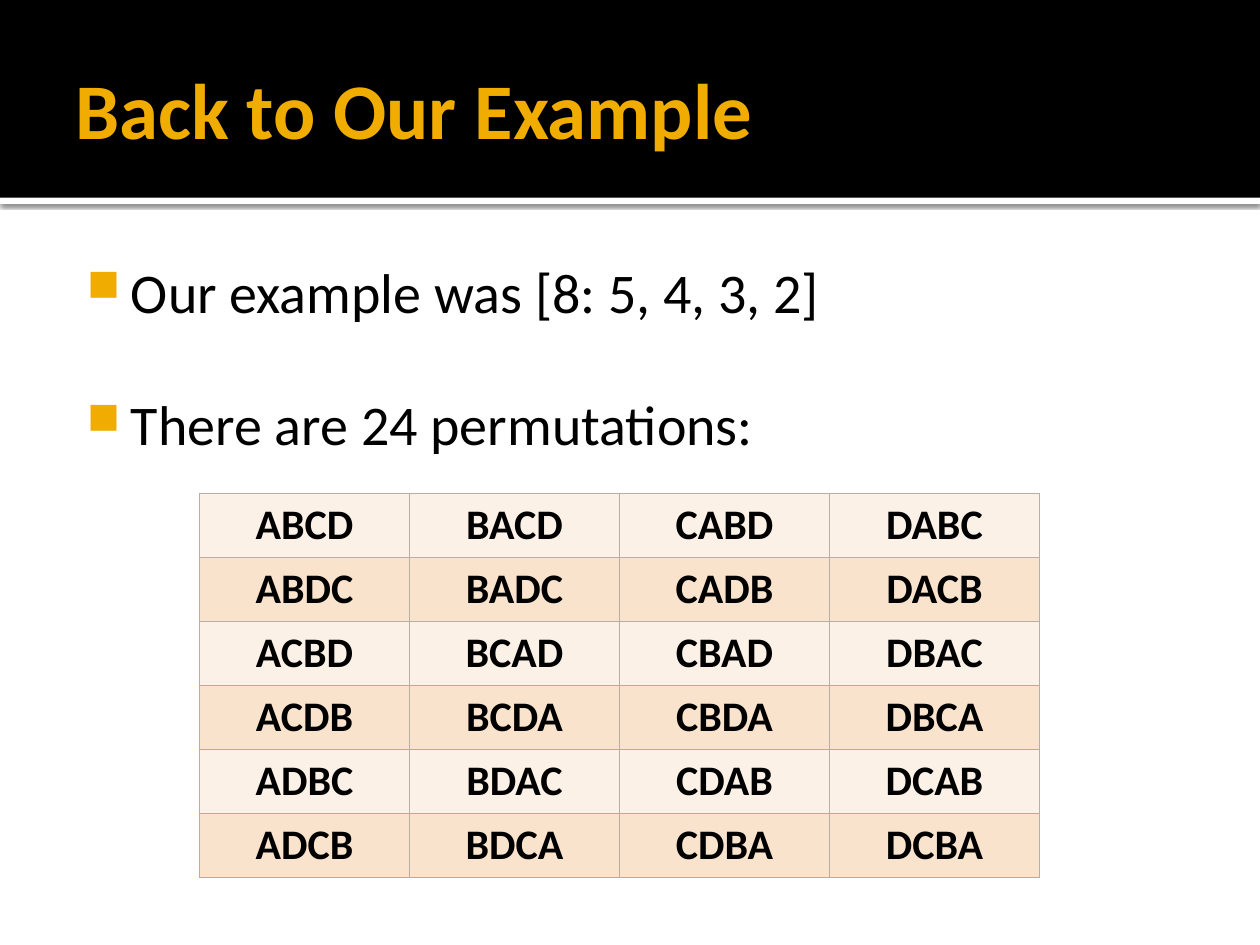
"""Build a slide that lists the 24 permutations of four voters in a table."""
from itertools import permutations

from lxml import etree
from pptx import Presentation
from pptx.dml.color import RGBColor
from pptx.enum.shapes import MSO_SHAPE
from pptx.enum.text import MSO_ANCHOR, PP_ALIGN
from pptx.oxml import parse_xml
from pptx.oxml.ns import nsdecls, qn
from pptx.util import Pt

RECTANGLE = MSO_SHAPE.RECTANGLE
MIDDLE = MSO_ANCHOR.MIDDLE
CENTER = PP_ALIGN.CENTER
GOLD, BLACK, WHITE, GRAY = "F0AD00", "000000", "FFFFFF", "B8AEA6"
ROW_FILLS = ("FCF1E7", "F9E3CC")
ROWS, COLUMNS = 6, 4
COLUMN_WIDTH, ROW_HEIGHT = 120, 36.57


def color(value):
    return RGBColor.from_string(value)


def format_runs(paragraph, size, value, bold=False):
    for run in paragraph.runs:
        run.font.name = "Calibri"
        run.font.size = Pt(size)
        run.font.bold = bold
        run.font.color.rgb = color(value)


presentation = Presentation()
presentation.slide_width = Pt(720)
presentation.slide_height = Pt(540)
slide = presentation.slides.add_slide(presentation.slide_layouts[6])

bands = []
for top, height, fill in ((113, 3.6, WHITE), (0, 113, BLACK)):
    band = slide.shapes.add_shape(RECTANGLE, Pt(0), Pt(top), Pt(720), Pt(height))
    band.shadow.inherit = False
    band.fill.solid()
    band.fill.fore_color.rgb = color(fill)
    band.line.fill.background()
    bands.append(band)

effects = bands[0]._element.spPr.find(qn("a:effectLst"))
effects.append(parse_xml(
    f'<a:outerShdw {nsdecls("a")} blurRad="{Pt(2.5)}" dist="{Pt(0.8)}" dir="5400000" rotWithShape="0">'
    f'<a:srgbClr val="{BLACK}"><a:alpha val="60000"/></a:srgbClr></a:outerShdw>'))

title = slide.shapes.add_textbox(Pt(36), Pt(12.24), Pt(648), Pt(98.64))
title_frame = title.text_frame
title_frame.word_wrap = True
title_frame.vertical_anchor = MIDDLE
title_frame.margin_right = Pt(3.6)
title_frame.text = "Back to Our Example"
format_runs(title_frame.paragraphs[0], 45, GOLD, bold=True)

body = slide.shapes.add_textbox(Pt(36), Pt(139.68), Pt(648), Pt(136))
body_frame = body.text_frame
body_frame.word_wrap = True
body_frame.margin_left = Pt(4.32)
body_frame.margin_top = Pt(7.2)
body_frame.text = "Our example was [8: 5, 4, 3, 2]\nThere are 24 permutations:"
body_frame.paragraphs[1].space_before = Pt(37.5)
for paragraph in body_frame.paragraphs:
    format_runs(paragraph, 32, BLACK)
    properties = paragraph._p.get_or_add_pPr()
    properties.set("marL", str(Pt(34.56)))
    properties.set("indent", str(Pt(-25.2)))
    bullet_color = etree.SubElement(properties, qn("a:buClr"))
    etree.SubElement(bullet_color, qn("a:srgbClr"), val=GOLD)
    etree.SubElement(properties, qn("a:buSzPct"), val="80000")
    etree.SubElement(properties, qn("a:buChar"), char="■")

table_frame = slide.shapes.add_table(
    ROWS, COLUMNS, Pt(114), Pt(282), Pt(COLUMN_WIDTH * COLUMNS), Pt(ROW_HEIGHT * ROWS))
table = table_frame.table
for row in table.rows:
    row.height = Pt(ROW_HEIGHT)

for index, order in enumerate(permutations("ABCD")):
    column_index, row_index = divmod(index, ROWS)
    cell = table.cell(row_index, column_index)
    cell.text_frame.text = "".join(order)
    cell.vertical_anchor = MIDDLE
    paragraph = cell.text_frame.paragraphs[0]
    paragraph.alignment = CENTER
    format_runs(paragraph, 24, BLACK, bold=True)
    top_color = GOLD if row_index > 2 else GRAY
    bottom_color = GOLD if row_index > 1 else GRAY
    edges = (("lnL", GRAY), ("lnR", GRAY), ("lnT", top_color), ("lnB", bottom_color))
    for edge, edge_color in edges:
        width = Pt(1) if edge_color == GOLD else Pt(0.5)
        line = etree.SubElement(cell._tc.get_or_add_tcPr(), qn(f"a:{edge}"), w=str(width))
        line_fill = etree.SubElement(line, qn("a:solidFill"))
        etree.SubElement(line_fill, qn("a:srgbClr"), val=edge_color)
    cell.fill.solid()
    cell.fill.fore_color.rgb = color(ROW_FILLS[row_index % 2])

presentation.save("out.pptx")
